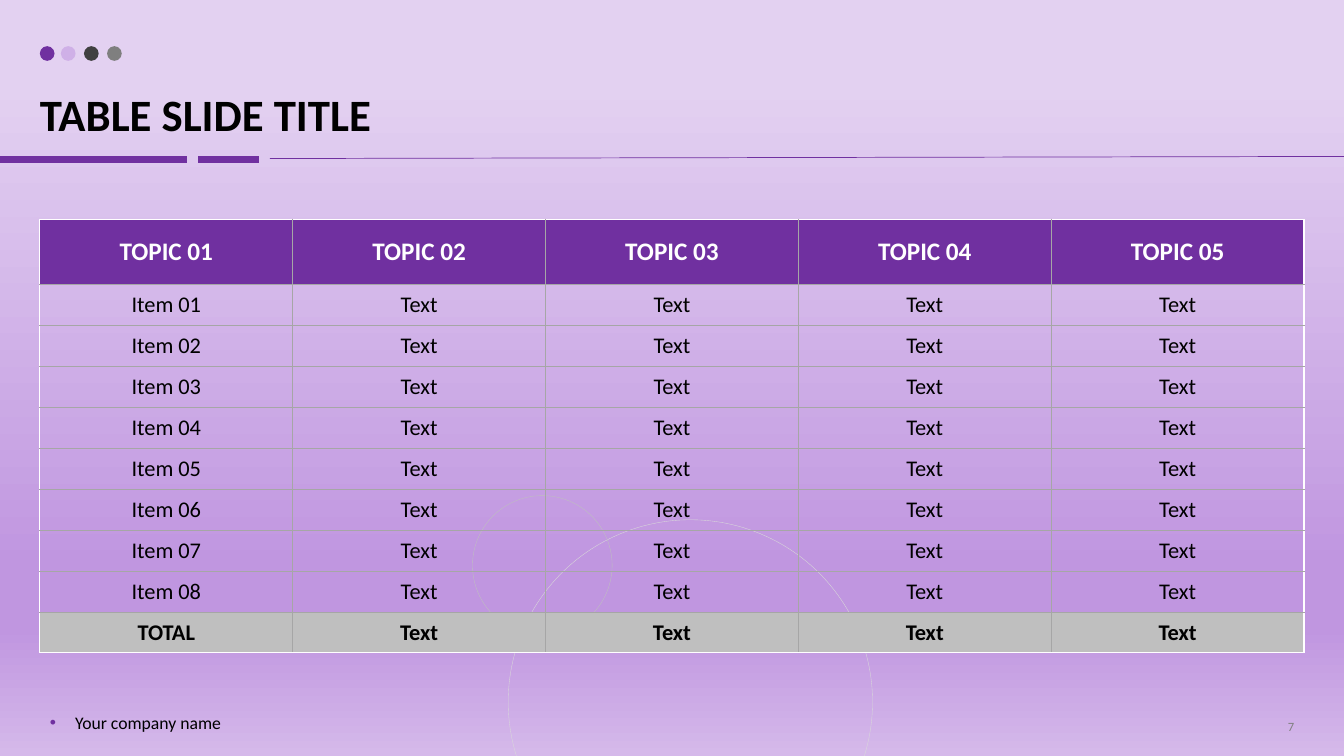
from lxml.etree import SubElement
from pptx import Presentation
from pptx.dml.color import RGBColor
from pptx.enum.shapes import MSO_CONNECTOR, MSO_SHAPE
from pptx.enum.text import MSO_ANCHOR, PP_ALIGN
from pptx.oxml.ns import qn
from pptx.util import Pt

PURPLE, GREY, WHITE, BLACK = "7030A0", "A6A6A6", "FFFFFF", "000000"
FONT = "Calibri"


def px(n):
    return round(n * 9525)


def rgb(code):
    return RGBColor.from_string(code)


def style(item, opts):
    for key, value in opts.items():
        setattr(item, key, value)


def write(frame, text, size, color, bold=False, **opts):
    """Put one formatted paragraph in the frame and return it."""
    para = frame.paragraphs[0]
    style(para, opts)
    run = para.add_run()
    run.text = text
    style(run.font, {"name": FONT, "size": Pt(size), "bold": bold})
    run.font.color.rgb = rgb(color)
    return para


def label(slide, box, **opts):
    shape = slide.shapes.add_textbox(*map(px, box))
    style(shape.text_frame, {"word_wrap": True, **opts})
    return shape.text_frame


def oval(slide, box, fill=None, line=None, alpha=None):
    shape = slide.shapes.add_shape(MSO_SHAPE.OVAL, *map(px, box))
    shape.shadow.inherit = False
    if fill:
        shape.fill.solid()
        shape.fill.fore_color.rgb = rgb(fill)
        if alpha:
            color = shape._element.spPr.find(".//" + qn("a:srgbClr"))
            SubElement(color, qn("a:alpha"), val=str(alpha * 1000))
    else:
        shape.fill.background()
    if line:
        shape.line.color.rgb = rgb(line)
        shape.line.width = Pt(0.25)
    else:
        shape.line.fill.background()


def rule(slide, start, end, width):
    line = slide.shapes.add_connector(
        MSO_CONNECTOR.STRAIGHT, *map(px, start + end))
    line.line.color.rgb = rgb(PURPLE)
    line.line.width = Pt(width)
    SubElement(line._element.spPr, qn("a:effectLst"))


def backdrop(slide):
    fill = slide.background.fill
    fill.gradient()
    fill.gradient_angle = 270
    stops = slide._element.find(".//" + qn("a:gsLst"))
    for stop in list(stops):
        stops.remove(stop)
    for place, code in ((11, "E3D1F1"), (75, "C096E0"),
                        (83, "C096E0"), (100, "D5B9EA")):
        stop = SubElement(stops, qn("a:gs"), pos=str(place * 1000))
        SubElement(stop, qn("a:srgbClr"), val=code)


def rings(slide, left, top):
    oval(slide, (left + 34, top + 23, 347, 347), line="D9D9D9")
    oval(slide, (left, top, 133, 133), line="BFBFBF")


def header(slide, left, top, width, height):
    base = top + height + 18
    for start, end in ((-3, 178), (189, 247)):
        rule(slide, (start, base), (end, base), 4.5)
    rule(slide, (257, base - 1), (1280, base - 3), 0.5)
    dots = ((0, PURPLE, None), (20, "C7A2E3", 70),
            (42, "404040", None), (64, "7F7F7F", None))
    for shift, code, alpha in dots:
        oval(slide, (left + shift, top + 18, 14, 14), code, alpha=alpha)
    frame = label(slide, (left, top, width, height),
                  vertical_anchor=MSO_ANCHOR.BOTTOM, margin_left=0,
                  margin_right=0, margin_top=0, margin_bottom=0)
    write(frame, "TABLE SLIDE TITLE", 32, BLACK, True, line_spacing=0.9)


def border(cell, outer):
    """Draw white lines on the outer sides and grey lines on the rest."""
    props = cell._tc.get_or_add_tcPr()
    for side in "LRTB":
        code, width = (WHITE, 1) if side in outer else (GREY, 0.5)
        line = SubElement(props, qn("a:ln" + side), w=str(Pt(width)))
        fill = SubElement(line, qn("a:solidFill"))
        SubElement(fill, qn("a:srgbClr"), val=code)


def grid(slide, left, top, width, height):
    rows = [[f"TOPIC {n:02}" for n in range(1, 6)]]
    rows += [[f"Item {n:02}"] + ["Text"] * 4 for n in range(1, 9)]
    rows += [["TOTAL"] + ["Text"] * 4]
    last, end = len(rows) - 1, len(rows[0]) - 1
    table = slide.shapes.add_table(
        last + 1, end + 1, *map(px, (left, top, width, height))).table
    style(table, {"first_row": False, "horz_banding": False})
    head = 62
    for r, texts in enumerate(rows):
        table.rows[r].height = px((height - head) / last if r else head)
        size, color, fill = 16, BLACK, None
        if r == 0:
            size, color, fill = 18, WHITE, PURPLE
        elif r == last:
            fill = "BFBFBF"
        for c, text in enumerate(texts):
            cell = table.cell(r, c)
            cell.vertical_anchor = MSO_ANCHOR.MIDDLE
            sides = {"L": c == 0, "R": c == end, "T": r == 0, "B": r == last}
            border(cell, [side for side, edge in sides.items() if edge])
            if fill:
                cell.fill.solid()
                cell.fill.fore_color.rgb = rgb(fill)
            else:
                cell.fill.background()
            write(cell.text_frame, text, size, color, bool(fill),
                  alignment=PP_ALIGN.CENTER)


def footer(slide, left, top, width, height):
    frame = label(slide, (left, top, 237, height))
    para = write(frame, "Your company name", 12.6, BLACK,
                 line_spacing=0.7, space_before=Pt(10))
    props = para._p.get_or_add_pPr()
    style_attrs = {"marL": px(24), "indent": px(-24)}
    for key, value in style_attrs.items():
        props.set(key, str(value))
    color = SubElement(props, qn("a:buClr"))
    SubElement(color, qn("a:srgbClr"), val=PURPLE)
    SubElement(props, qn("a:buFont"), typeface="Arial")
    SubElement(props, qn("a:buChar"), char="•")
    page = label(slide, (left + width - 288, top, 288, height),
                 vertical_anchor=MSO_ANCHOR.MIDDLE)
    write(page, "7", 9, "7F7F7F", alignment=PP_ALIGN.RIGHT)


def main():
    deck = Presentation()
    style(deck, {"slide_width": px(1280), "slide_height": px(720)})
    slide = deck.slides.add_slide(deck.slide_layouts[6])
    backdrop(slide)
    rings(slide, 450, 472)
    header(slide, 38, 26, 1204, 108)
    grid(slide, 38, 209, 1204, 413)
    footer(slide, 38, 679, 1204, 26)
    deck.save("out.pptx")


if __name__ == "__main__":
    main()
